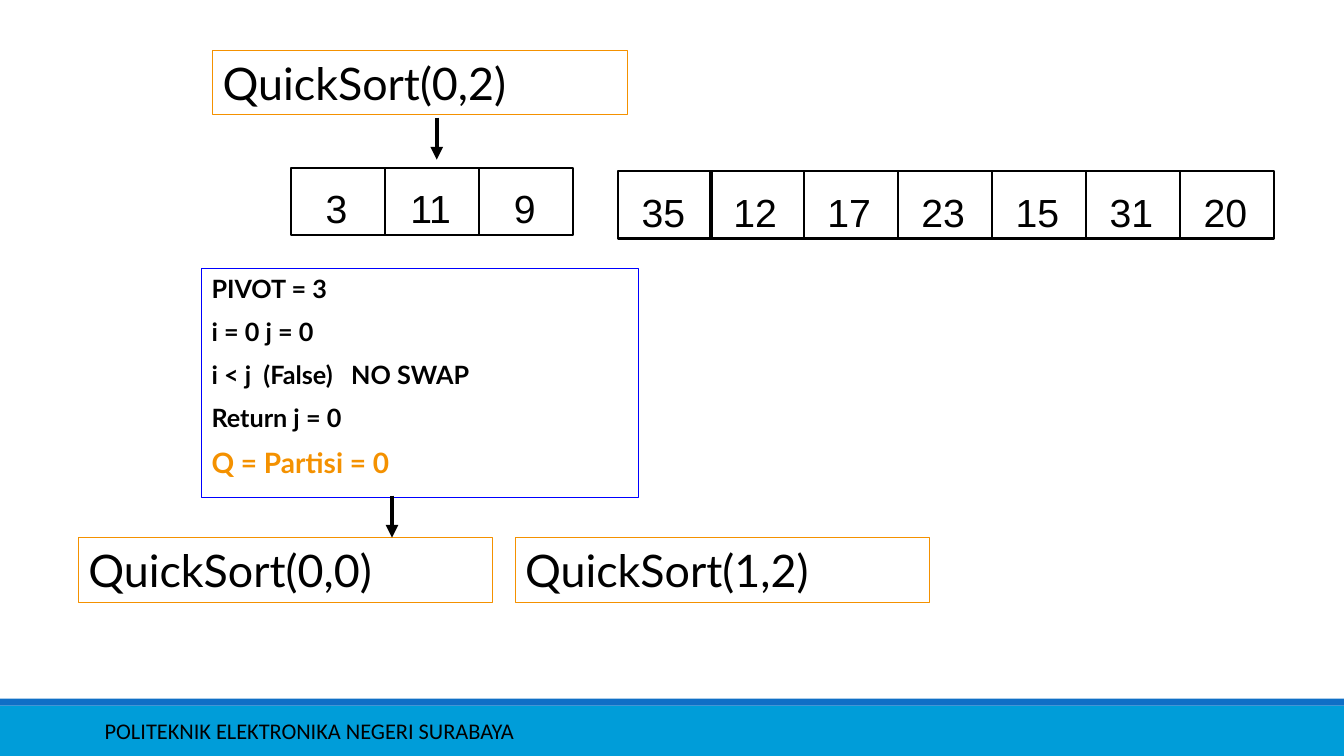
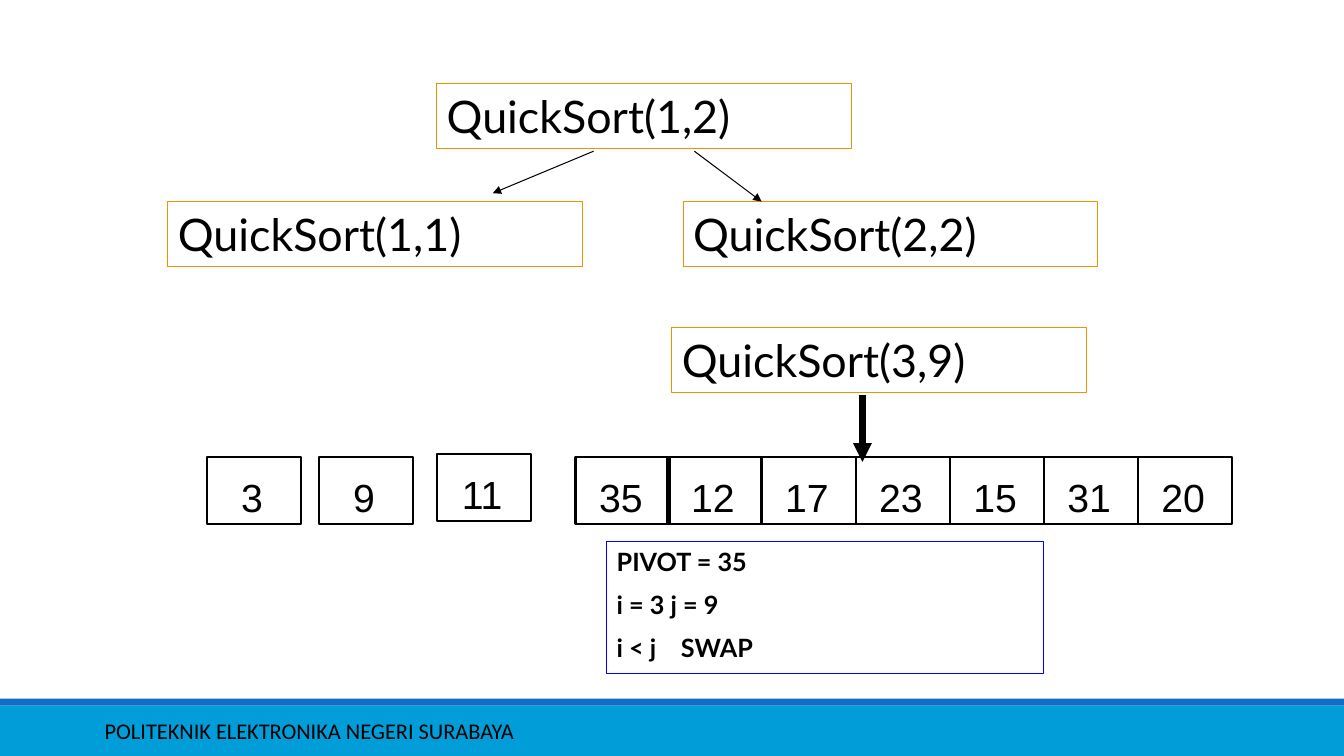
"""Build two slides that trace QuickSort calls on an array."""
from dataclasses import dataclass

import lxml.etree
import pptx
import pptx.dml.color
import pptx.enum.shapes
import pptx.enum.text
import pptx.oxml.ns
import pptx.presentation
import pptx.shapes.autoshape
import pptx.slide
import pptx.util

Pt = pptx.util.Pt
ALIGN = pptx.enum.text.PP_ALIGN
ANCHOR = pptx.enum.text.MSO_ANCHOR
BLACK = "000000"
ORANGE = "F49100"
BLUE = "0000FF"
BAND = "009DD9"
STRIPE = "0F6FC6"
PAGE_WIDTH, PAGE_HEIGHT = 960, 540
BAND_HEIGHT, STRIPE_HEIGHT = 36, 5
NODE_WIDTH, NODE_HEIGHT = 296, 46.1
TRACE_WIDTH = 312
CELL_WIDTH, CELL_HEIGHT = 67.2, 48


@dataclass(frozen=True)
class Node:
    """A QuickSort call over the range from first to last."""
    left: float
    top: float
    first: int
    last: int


@dataclass(frozen=True)
class Cells:
    """A run of adjoining array cells."""
    left: float
    top: float
    values: tuple[int, ...]


@dataclass(frozen=True)
class Trace:
    """A box of partition steps with an optional result."""
    left: float
    top: float
    height: float
    steps: tuple[str, ...]
    result: str = ""


@dataclass(frozen=True)
class Arrow:
    """An arrow from a start point to an end point."""
    start: tuple[float, float]
    end: tuple[float, float]
    weight: float


@dataclass(frozen=True)
class Diagram:
    """Everything that one page shows above the footer."""
    nodes: tuple[Node, ...]
    cells: tuple[Cells, ...]
    trace: Trace
    arrows: tuple[Arrow, ...]


UNSORTED = (12, 17, 23, 15, 31, 20)
DIAGRAMS = (
    Diagram(
        nodes=(Node(152, 36, 0, 2), Node(56, 384, 0, 0), Node(368, 384, 1, 2)),
        cells=(Cells(208, 120, (3, 11, 9)), Cells(441.4, 122.4, (35,)),
               Cells(507, 122.4, UNSORTED)),
        trace=Trace(144, 192, 163.4,
                    ("PIVOT = 3", "i = 0 j = 0", "i < j  (False)   NO SWAP", "Return j = 0"),
                    "Q = Partisi = 0"),
        arrows=(Arrow((280, 354), (280, 384), 3), Arrow((312, 84), (312, 114), 3)),
    ),
    Diagram(
        nodes=(Node(312, 60, 1, 2), Node(120, 144, 1, 1), Node(488, 144, 2, 2),
               Node(480, 234, 3, 9)),
        cells=(Cells(147.6, 326.2, (3,)), Cells(227.6, 326.2, (9,)), Cells(312, 324, (11,)),
               Cells(411.1, 326.2, (35,)), Cells(476.8, 326.2, UNSORTED)),
        trace=Trace(433.4, 386.6, 94.5, ("PIVOT = 35", "i = 3 j = 9", "i < j    SWAP")),
        arrows=(Arrow((424, 108), (352, 138), 0.75), Arrow((496, 108), (544, 144), 0.75),
                Arrow((616, 282), (616, 330), 4.5)),
    ),
)


def colour(value: str) -> pptx.dml.color.RGBColor:
    """Turn a hex string into a colour."""
    return pptx.dml.color.RGBColor.from_string(value)


def add_box(page: pptx.slide.Slide, left: float, top: float, width: float, height: float,
            line: str = "", weight: float = 0.75, fill: str = "") -> pptx.shapes.autoshape.Shape:
    """Add a plain rectangle with an optional outline and fill."""
    box = page.shapes.add_shape(pptx.enum.shapes.MSO_SHAPE.RECTANGLE,
                                Pt(left), Pt(top), Pt(width), Pt(height))
    box.shadow.inherit = False
    if fill:
        box.fill.solid()
        box.fill.fore_color.rgb = colour(fill)
    else:
        box.fill.background()
    if line:
        box.line.color.rgb = colour(line)
        box.line.width = Pt(weight)
    else:
        box.line.fill.background()
    return box


def write(box: pptx.shapes.autoshape.Shape, lines: tuple[str, ...], size: float, font: str,
          bold: bool = False, align: ALIGN = ALIGN.LEFT, anchor: ANCHOR = ANCHOR.TOP) -> None:
    """Fill a box with black paragraphs of one style."""
    frame = box.text_frame
    frame.word_wrap = True
    frame.vertical_anchor = anchor
    frame.text = "\n".join(lines)
    for index, para in enumerate(frame.paragraphs):
        para.alignment = align
        para.space_before = Pt(size / 2 if index else 0)
        para.font.size = Pt(size)
        para.font.name = font
        para.font.bold = bold
        para.font.color.rgb = colour(BLACK)


def draw_node(page: pptx.slide.Slide, node: Node) -> None:
    """Draw a QuickSort call."""
    box = add_box(page, node.left, node.top, NODE_WIDTH, NODE_HEIGHT, ORANGE)
    write(box, (f"QuickSort({node.first},{node.last})",), 32, "Lato")


def draw_cells(page: pptx.slide.Slide, cells: Cells) -> None:
    """Draw array cells side by side."""
    for index, value in enumerate(cells.values):
        box = add_box(page, cells.left + index * CELL_WIDTH, cells.top,
                      CELL_WIDTH, CELL_HEIGHT, BLACK, 1.5)
        write(box, (str(value),), 28, "Arial", align=ALIGN.CENTER, anchor=ANCHOR.BOTTOM)
        frame = box.text_frame
        frame.margin_left = frame.margin_top = 0
        frame.margin_right = frame.margin_bottom = Pt(2.5)


def draw_trace(page: pptx.slide.Slide, trace: Trace) -> None:
    """Draw the partition steps and highlight the result."""
    box = add_box(page, trace.left, trace.top, TRACE_WIDTH, trace.height, BLUE)
    lines = trace.steps + ((trace.result,) if trace.result else ())
    write(box, lines, 18, "Lato", bold=True)
    if trace.result:
        font = box.text_frame.paragraphs[-1].font
        font.size = Pt(20)
        font.color.rgb = colour(ORANGE)


def draw_arrow(page: pptx.slide.Slide, arrow: Arrow) -> None:
    """Draw a straight arrow with a triangular head."""
    connector = page.shapes.add_connector(pptx.enum.shapes.MSO_CONNECTOR.STRAIGHT,
                                          *map(Pt, arrow.start + arrow.end))
    connector.line.color.rgb = colour(BLACK)
    connector.line.width = Pt(arrow.weight)
    qn = pptx.oxml.ns.qn
    properties = connector.element.spPr
    lxml.etree.SubElement(properties.find(qn("a:ln")), qn("a:tailEnd"), type="triangle")
    lxml.etree.SubElement(properties, qn("a:effectLst"))


def add_footer(page: pptx.slide.Slide) -> None:
    """Build the footer and move it to the layout that all pages share."""
    layout = page.slide_layout
    for holder in list(layout.placeholders):
        holder.element.getparent().remove(holder.element)
    band_top = PAGE_HEIGHT - BAND_HEIGHT
    band = add_box(page, 0, band_top, PAGE_WIDTH, BAND_HEIGHT, fill=BAND)
    stripe = add_box(page, 0, band_top - STRIPE_HEIGHT, PAGE_WIDTH, STRIPE_HEIGHT, fill=STRIPE)
    label = page.shapes.add_textbox(Pt(67.7), Pt(507.6), Pt(605.5), Pt(28.8))
    write(label, ("POLITEKNIK ELEKTRONIKA NEGERI SURABAYA",), 16, "Calibri", anchor=ANCHOR.MIDDLE)
    for part in (band, stripe, label):
        layout.element.cSld.spTree.append(part.element)


def draw_diagram(page: pptx.slide.Slide, diagram: Diagram) -> None:
    """Draw all the parts of one page."""
    for cells in diagram.cells:
        draw_cells(page, cells)
    for node in diagram.nodes:
        draw_node(page, node)
    draw_trace(page, diagram.trace)
    for arrow in diagram.arrows:
        draw_arrow(page, arrow)


def main() -> None:
    """Build and save the deck."""
    deck = pptx.Presentation()
    deck.slide_width, deck.slide_height = Pt(PAGE_WIDTH), Pt(PAGE_HEIGHT)
    blank = deck.slide_layouts[6]
    pages = [deck.slides.add_slide(blank) for _ in DIAGRAMS]
    add_footer(pages[0])
    for page, diagram in zip(pages, DIAGRAMS):
        draw_diagram(page, diagram)
    deck.save("out.pptx")


if __name__ == "__main__":
    main()
